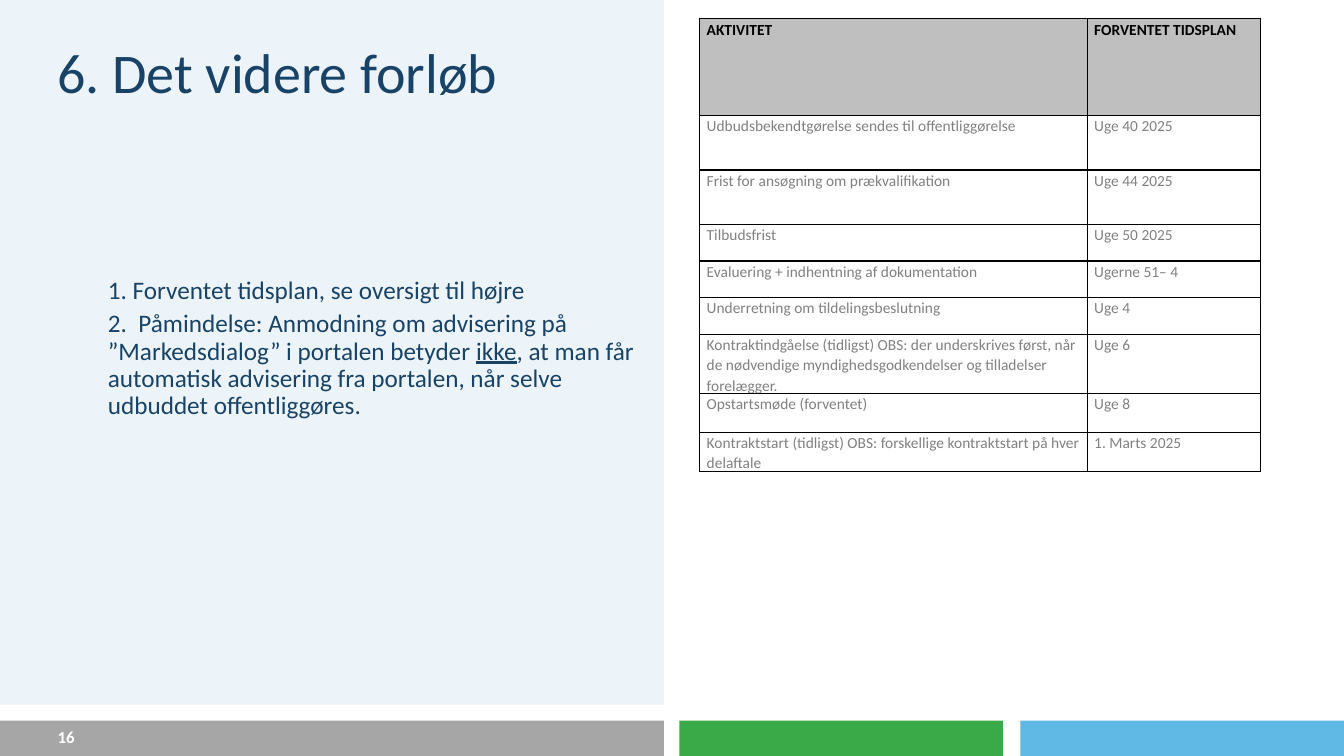
"""Build the slide about the further process and its expected schedule."""
from lxml import etree
from pptx import Presentation
from pptx.dml.color import RGBColor
from pptx.enum.shapes import MSO_SHAPE
from pptx.enum.text import MSO_ANCHOR
from pptx.oxml.ns import qn
from pptx.util import Inches, Pt

RECTANGLE = MSO_SHAPE.RECTANGLE
TOP, MIDDLE = MSO_ANCHOR.TOP, MSO_ANCHOR.MIDDLE
WIDTH, HEIGHT = Inches(13.33), Inches(7.5)
FONT = "Calibri"

NAVY = RGBColor(0x19, 0x43, 0x66)
PALE_BLUE = RGBColor(0xC1, 0xDB, 0xF0)
GRAY = RGBColor(0xA6, 0xA6, 0xA6)
GREEN = RGBColor(0x39, 0xAA, 0x47)
SKY = RGBColor(0x60, 0xB9, 0xE5)
HEADER_GRAY = RGBColor(0xBF, 0xBF, 0xBF)
TEXT_GRAY = RGBColor(0x80, 0x80, 0x80)
BLACK = RGBColor(0, 0, 0)
WHITE = RGBColor(0xFF, 0xFF, 0xFF)

PANEL_WIDTH = 49.4
MARGIN = 4.28
TEXT_WIDTH = 43.66
FOOTER_TOP, FOOTER_HEIGHT = 95.33, 4.67
FOOTER_BARS = [(0, PANEL_WIDTH, GRAY), (50.55, 24.08, GREEN), (75.92, 24.08, SKY)]

BODY = [
    ["1. Forventet tidsplan, se oversigt til højre"],
    ["2.  Påmindelse: Anmodning om advisering på ”Markedsdialog” i portalen betyder ",
     "ikke",
     ", at man får automatisk advisering fra portalen, når selve udbuddet offentliggøres."],
]
UNDERLINED = "ikke"

COLUMN_SHARES = [28.83, 12.87]
SCHEDULE = [
    (12.8, "AKTIVITET", "FORVENTET TIDSPLAN"),
    (7.2, "Udbudsbekendtgørelse sendes til offentliggørelse", "Uge 40 2025"),
    (7.2, "Frist for ansøgning om prækvalifikation", "Uge 44 2025"),
    (4.85, "Tilbudsfrist", "Uge 50 2025"),
    (4.85, "Evaluering + indhentning af dokumentation", "Ugerne 51– 4"),
    (4.85, "Underretning om tildelingsbeslutning", "Uge 4"),
    (4.85, "Kontraktindgåelse (tidligst) OBS: der underskrives først, når de nødvendige "
     "myndighedsgodkendelser og tilladelser forelægger.", "Uge 6"),
    (5.1, "Opstartsmøde (forventet)", "Uge 8"),
    (5.1, "Kontraktstart (tidligst) OBS: forskellige kontraktstart på hver delaftale",
     "1. Marts 2025"),
]


def across(share):
    """Turn a percentage of the slide width into a length."""
    return round(WIDTH * share / 100)


def down(share):
    """Turn a percentage of the slide height into a length."""
    return round(HEIGHT * share / 100)


def frame(left, top, width, height):
    """Turn four percentages into a position and size."""
    return across(left), down(top), across(width), down(height)


def style_runs(paragraph, size, color, bold=False):
    """Format every run of a paragraph."""
    for run in paragraph.runs:
        run.font.name = FONT
        run.font.size = Pt(size)
        run.font.color.rgb = color
        run.font.bold = bold


def add_bar(slide, area, color, opacity=100):
    """Add a plain filled rectangle."""
    shape = slide.shapes.add_shape(RECTANGLE, *frame(*area))
    shape.shadow.inherit = False
    shape.fill.solid()
    shape.fill.fore_color.rgb = color
    shape.line.fill.background()
    if opacity < 100:
        color_element = shape.fill._xPr.find(qn("a:solidFill"))[0]
        etree.SubElement(color_element, qn("a:alpha"), val=str(opacity * 1000))


def add_text(slide, area, paragraphs, size, color, bold=False, anchor=TOP,
             indent=0, space_after=0):
    """Add a text box whose paragraphs are lists of run texts."""
    text_frame = slide.shapes.add_textbox(*frame(*area)).text_frame
    text_frame.word_wrap = True
    text_frame.vertical_anchor = anchor
    text_frame.margin_left = text_frame.margin_right = 0
    text_frame.margin_top = text_frame.margin_bottom = 0
    for index, texts in enumerate(paragraphs):
        paragraph = text_frame.add_paragraph() if index else text_frame.paragraphs[0]
        paragraph.line_spacing = 0.9
        paragraph.space_after = Pt(space_after)
        paragraph._p.get_or_add_pPr().set("marL", str(Inches(indent)))
        for text in texts:
            run = paragraph.add_run()
            run.text = text
            if text == UNDERLINED:
                run.font.underline = True
        style_runs(paragraph, size, color, bold)


def add_borders(cell):
    """Draw thin black lines around a cell."""
    properties = cell._tc.get_or_add_tcPr()
    for index, side in enumerate(("lnL", "lnR", "lnT", "lnB")):
        line = etree.Element(qn(f"a:{side}"), w=str(Pt(1)))
        fill = etree.SubElement(line, qn("a:solidFill"))
        etree.SubElement(fill, qn("a:srgbClr"), val=str(BLACK))
        properties.insert(index, line)


def fill_cell(cell, text, is_header):
    """Write and format one schedule cell."""
    cell.margin_left = cell.margin_right = Inches(0.07)
    cell.margin_top = cell.margin_bottom = 0
    cell.text_frame.text = text
    paragraph = cell.text_frame.paragraphs[0]
    paragraph.line_spacing = 1.07
    paragraph.space_after = Pt(8)
    style_runs(paragraph, 11, BLACK if is_header else TEXT_GRAY, is_header)
    if is_header:
        cell.fill.solid()
        cell.fill.fore_color.rgb = HEADER_GRAY
    else:
        cell.fill.background()
    add_borders(cell)


def add_schedule(slide, left, top):
    """Add the table of activities and expected weeks."""
    area = frame(left, top, sum(COLUMN_SHARES), sum(row[0] for row in SCHEDULE))
    table = slide.shapes.add_table(len(SCHEDULE), len(COLUMN_SHARES), *area).table
    table.horz_banding = False
    for column, share in zip(table.columns, COLUMN_SHARES):
        column.width = across(share)
    for index, (share, *texts) in enumerate(SCHEDULE):
        table.rows[index].height = down(share)
        for cell, text in zip(table.rows[index].cells, texts):
            fill_cell(cell, text, index == 0)


def main():
    """Build and save the slide."""
    presentation = Presentation()
    presentation.slide_width, presentation.slide_height = WIDTH, HEIGHT
    slide = presentation.slides.add_slide(presentation.slide_layouts[6])
    for left, width, color in FOOTER_BARS:
        add_bar(slide, (left, FOOTER_TOP, width, FOOTER_HEIGHT), color)
    add_bar(slide, (0, 0, PANEL_WIDTH, 93.2), PALE_BLUE, opacity=30)
    add_text(slide, (MARGIN, FOOTER_TOP, 4.8, FOOTER_HEIGHT), [["16"]], 12, WHITE,
             bold=True, anchor=MIDDLE)
    add_text(slide, (MARGIN, 6, TEXT_WIDTH, 17.33), [["6. Det videre forløb"]], 40, NAVY)
    add_text(slide, (MARGIN, 36.8, TEXT_WIDTH, 50), BODY, 18, NAVY,
             indent=0.5, space_after=4)
    add_schedule(slide, 52.06, 2.5)
    presentation.save("out.pptx")


if __name__ == "__main__":
    main()
